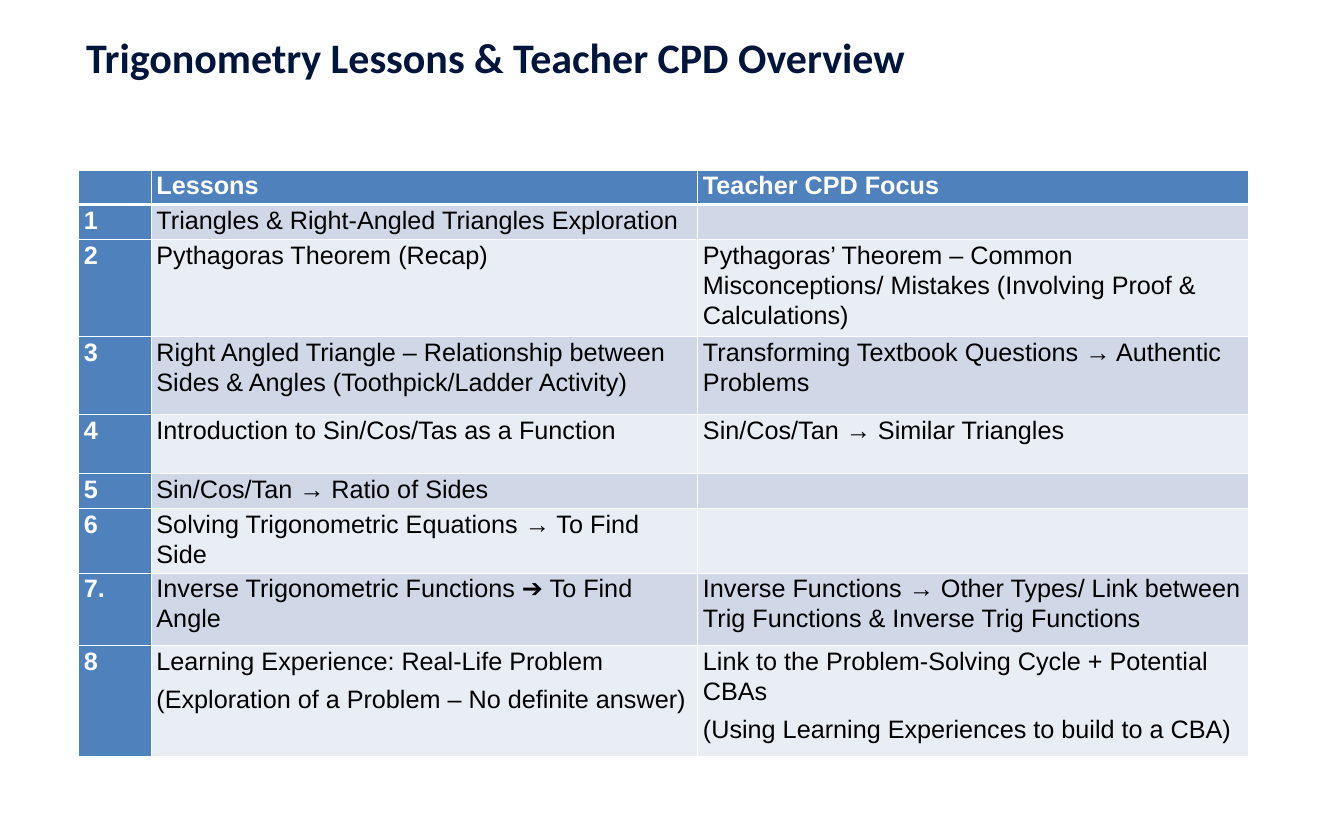
from dataclasses import dataclass

from lxml import etree
from pptx import Presentation
from pptx.dml.color import RGBColor
from pptx.oxml.ns import qn
from pptx.util import Inches, Pt


@dataclass(frozen=True)
class Theme:
    title_font: str = "Calibri"
    table_font: str = "Arial"
    title_size: int = 40
    table_size: int = 24
    title: str = "00153B"
    header: str = "4F81BD"
    bands: tuple = ("E9EDF4", "D0D8E8")
    body: str = "000000"
    white: str = "FFFFFF"


theme = Theme()


def style_font(font, name, size, color, bold):
    font.name = name
    font.size = Pt(size)
    font.color.rgb = RGBColor.from_string(color)
    font.bold = bold


def add_border(cell, side, points):
    properties = cell._tc.get_or_add_tcPr()
    line = etree.SubElement(properties, qn(f"a:ln{side}"), w=str(Pt(points)))
    fill = etree.SubElement(line, qn("a:solidFill"))
    etree.SubElement(fill, qn("a:srgbClr"), val=theme.white)


deck = Presentation()
deck.slide_width = Inches(17.78)
deck.slide_height = Inches(11.11)
page = deck.slides.add_slide(deck.slide_layouts[6])

title_box = page.shapes.add_textbox(Inches(1.04), Inches(0.37), Inches(12), Inches(1.28))
title_frame = title_box.text_frame
title_frame.word_wrap = True
title_frame.margin_bottom = 0
title_frame.text = "Trigonometry Lessons & Teacher CPD Overview"
title_span = title_frame.paragraphs[0].runs[0]
style_font(title_span.font, theme.title_font, theme.title_size, theme.title, True)

column_widths = [0.96, 7.23, 7.28]
lesson_rows = [
    (0.46, "", "Lessons", "Teacher CPD Focus"),
    (0.46, "1", "Triangles & Right-Angled Triangles Exploration", ""),
    (0.96, "2", "Pythagoras Theorem (Recap)",
     "Pythagoras’ Theorem – Common Misconceptions/ Mistakes (Involving Proof & Calculations)"),
    (1.03, "3", "Right Angled Triangle – Relationship between Sides & Angles (Toothpick/Ladder Activity)",
     "Transforming Textbook Questions → Authentic Problems"),
    (0.78, "4", "Introduction to Sin/Cos/Tas as a Function", "Sin/Cos/Tan → Similar Triangles"),
    (0.46, "5", "Sin/Cos/Tan → Ratio of Sides", ""),
    (0.46, "6", "Solving Trigonometric Equations → To Find Side", ""),
    (0.96, "7.", "Inverse Trigonometric Functions ➔ To Find Angle",
     "Inverse Functions → Other Types/ Link between Trig Functions & Inverse Trig Functions"),
    (1.46, "8", "Learning Experience: Real-Life Problem\n(Exploration of a Problem – No definite answer)",
     "Link to the Problem-Solving Cycle + Potential CBAs\n(Using Learning Experiences to build to a CBA)"),
]

table = page.shapes.add_table(
    len(lesson_rows), len(column_widths),
    Inches(1.04), Inches(2.25), Inches(15.47), Inches(7.03),
).table
table.first_col = True
for column, width in zip(table.columns, column_widths):
    column.width = Inches(width)

for row_index, (height, *texts) in enumerate(lesson_rows):
    table.rows[row_index].height = Inches(height)
    for column_index, text in enumerate(texts):
        cell = table.cell(row_index, column_index)
        is_header = row_index == 0 or column_index == 0
        cell.margin_left = cell.margin_right = Inches(0.07)
        cell.margin_top = cell.margin_bottom = 0
        add_border(cell, "L", 1)
        add_border(cell, "R", 1)
        add_border(cell, "T", 3 if row_index == 1 else 1)
        add_border(cell, "B", 3 if row_index == 0 else 1)
        cell.fill.solid()
        fill_color = theme.header if is_header else theme.bands[row_index % 2]
        cell.fill.fore_color.rgb = RGBColor.from_string(fill_color)
        cell.text_frame.text = text
        for para in cell.text_frame.paragraphs:
            para.line_spacing = 1.07
            para.space_after = Pt(8)
            for span in para.runs:
                color = theme.white if is_header else theme.body
                style_font(span.font, theme.table_font, theme.table_size, color, is_header)

deck.save("out.pptx")
